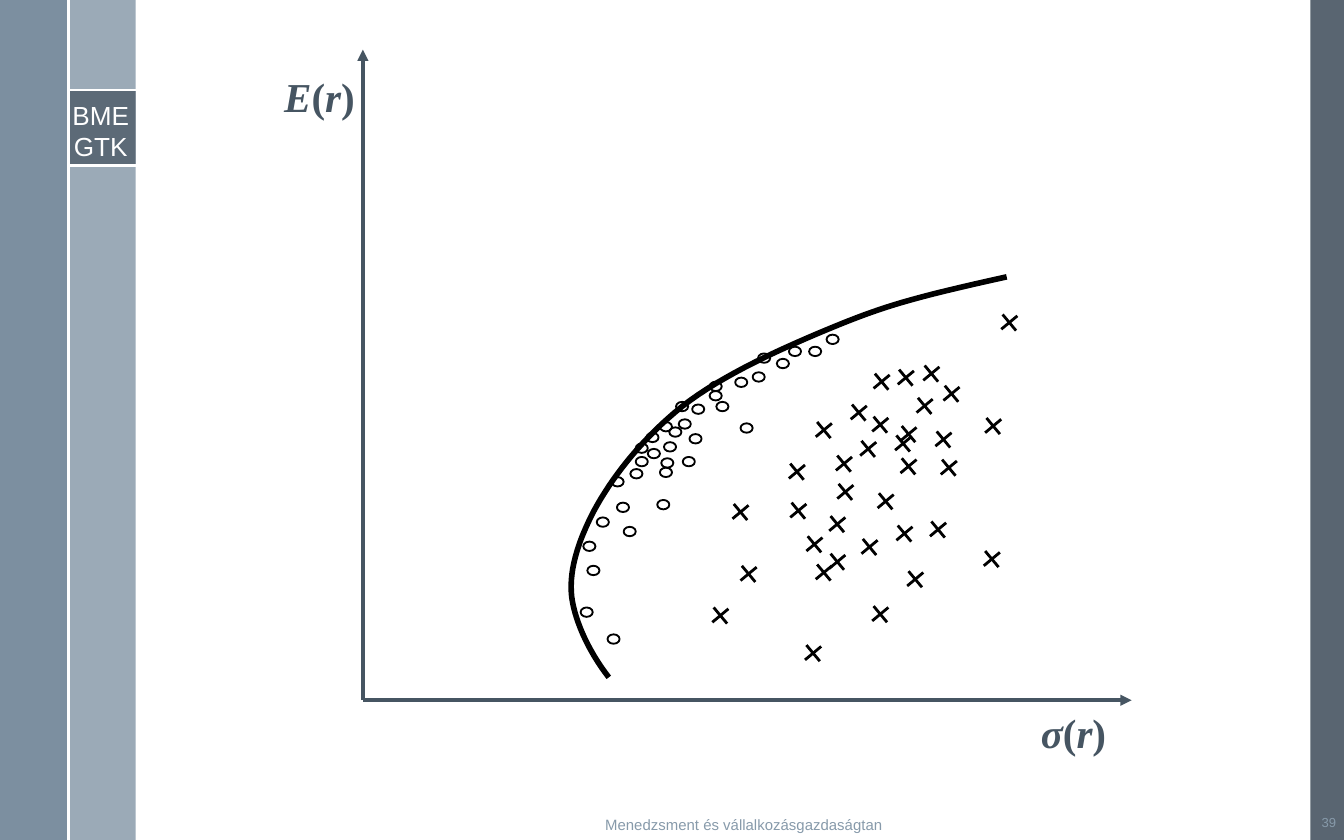
from lxml import etree
from pptx import Presentation
from pptx.dml.color import RGBColor
from pptx.enum.shapes import MSO_CONNECTOR, MSO_SHAPE
from pptx.enum.text import MSO_ANCHOR, PP_ALIGN
from pptx.oxml.ns import qn
from pptx.util import Inches, Pt

LINE = MSO_CONNECTOR.STRAIGHT
RECT, OVAL = MSO_SHAPE.RECTANGLE, MSO_SHAPE.OVAL
CENTER, RIGHT = PP_ALIGN.CENTER, PP_ALIGN.RIGHT
TOP, MIDDLE = MSO_ANCHOR.TOP, MSO_ANCHOR.MIDDLE

COLORS = {"dark": "475562", "blue": "6A8093", "light": "9BAAB7", "axis": "465562",
          "footer": "879AAA", "white": "FFFFFF", "black": "000000"}

# Content: bands are (left, top, width, height, colour, opacity %)
BANDS = [
    (9.75, 0, 0.25, 6.25, "dark", 90),
    (0.51, 0, 0.5, 6.25, "light", 100),
    (0, 0, 0.5, 6.25, "blue", 88),
    (0.51, 0.67, 0.5, 0.56, "dark", 75),
]
RULES = [((0.51, 0.67), (1.01, 0.67)), ((0.51, 1.23), (1.01, 1.23)),
         ((0.51, 0), (0.51, 6.25))]
ORIGIN = (2.7, 5.21)
AXIS_ENDS = [(8.42, 5.21), (2.7, 0.37)]
AXIS_LABELS = [("σ", (7.34, 5.22, 0.93, 0.45)), ("E", (1.91, 0.49, 0.77, 0.45))]
FOOTER = "Menedzsment és vállalkozásgazdaságtan"
PAGE = "39"

# Efficient frontier: start point, then Bezier segments
FRONTIER_START = (7.49, 2.06)
FRONTIER = [
    ((6.77, 2.22), (6.57, 2.28), (6.16, 2.45)),
    ((5.75, 2.62), (5.3, 2.83), (5.02, 3.07)),
    ((4.75, 3.3), (4.55, 3.56), (4.42, 3.8)),
    ((4.3, 4.03), (4.22, 4.27), (4.26, 4.48)),
    ((4.3, 4.69), (4.42, 4.9), (4.53, 5.04)),
]
STEPS = 16

# Centres of the crosses (single assets)
CROSSES = [
    (7.08, 2.93), (5.93, 3.51), (7.06, 3.48), (6.59, 3.73), (6.46, 3.34), (6.98, 3.94),
    (6.05, 4.86), (5.36, 4.58), (6.47, 4.07), (5.57, 4.27), (6.06, 4.05), (6.55, 4.57),
    (5.51, 3.81), (7.51, 2.4), (6.29, 3.66), (6.39, 3.07), (6.73, 3.97), (7.38, 4.16),
    (6.76, 3.23), (6.74, 2.81), (7.39, 3.17), (6.81, 4.31), (6.13, 4.26), (5.94, 3.8),
    (6.28, 3.45), (6.76, 3.47), (6.56, 2.84), (7.02, 3.27), (6.23, 4.18), (6.23, 3.9),
    (6.13, 3.2), (6.55, 3.16), (6.72, 3.3), (6.88, 3.02), (6.93, 2.78),
]
# Top left corners of the circles (portfolios)
CIRCLES = [
    (5.6, 2.77), (5.33, 2.99), (4.44, 3.85), (5.05, 3.12), (4.82, 3.34), (4.32, 4.52),
    (5.13, 3.23), (5.28, 2.84), (4.64, 3.92), (4.34, 4.03), (5.03, 2.99), (4.89, 3.72),
    (5.15, 3.01), (4.91, 3.48), (5.51, 3.15), (5.87, 2.58), (5.64, 2.63), (4.94, 3.29),
    (4.52, 4.72), (4.59, 3.74), (4.69, 3.49), (4.91, 3.14), (4.92, 3.41), (4.55, 3.55),
    (5.08, 3.4), (4.81, 3.22), (4.73, 3.3), (5.28, 2.91), (4.98, 3.18), (6.02, 2.58),
    (5.78, 2.67), (5.47, 2.81), (6.15, 2.49), (4.73, 3.4), (4.37, 4.21),
]
CIRCLE_SIZE = (0.09, 0.07)

prs = Presentation()
prs.slide_width, prs.slide_height = Inches(10), Inches(6.25)
s = prs.slides.add_slide(prs.slide_layouts[6])


def rgb(name):
    return RGBColor.from_string(COLORS[name])


def inches(values):
    return [Inches(v) for v in values]


def add_line(start, end, color, width, arrow=False):
    c = s.shapes.add_connector(LINE, *inches(start + end))
    c.line.color.rgb = rgb(color)
    c.line.width = Pt(width)
    if arrow:
        etree.SubElement(c.line._get_or_add_ln(), qn("a:tailEnd"), type="triangle")
    etree.SubElement(c._element.spPr, qn("a:effectLst"))


def outline(sp, width):
    sp.shadow.inherit = False
    sp.fill.background()
    sp.line.color.rgb = rgb("black")
    sp.line.width = Pt(width)


def add_text(box, paragraphs, font, size, color, align, insets, anchor=TOP):
    """Each paragraph is a list of runs; returns the text frame."""
    tf = s.shapes.add_textbox(*inches(box)).text_frame
    tf.word_wrap = True
    tf.vertical_anchor = anchor
    tf.margin_left = tf.margin_right = Inches(insets[0])
    tf.margin_top = tf.margin_bottom = Inches(insets[1])
    for i, runs in enumerate(paragraphs):
        p = tf.add_paragraph() if i else tf.paragraphs[0]
        p.alignment = align
        for text in runs:
            r = p.add_run()
            r.text = text
            r.font.name, r.font.size = font, Pt(size)
            r.font.color.rgb = rgb(color)
    return tf


def bezier(p0, p1, p2, p3, t):
    u = 1 - t
    return tuple(u**3 * a + 3 * u * u * t * b + 3 * u * t * t * c + t**3 * d
                 for a, b, c, d in zip(p0, p1, p2, p3))


# Side bands and rules
for *box, color, opacity in BANDS:
    sp = s.shapes.add_shape(RECT, *inches(box))
    sp.shadow.inherit = False
    sp.fill.solid()
    sp.fill.fore_color.rgb = rgb(color)
    sp.line.fill.background()
    if opacity < 100:
        clr = sp._element.spPr.find(qn("a:solidFill")).find(qn("a:srgbClr"))
        etree.SubElement(clr, qn("a:alpha"), val=str(opacity * 1000))
for start, end in RULES:
    add_line(start, end, "white", 1.5)
add_text((0.5, 0.74, 0.5, 0.47), [["BME"], ["GTK"]], "Arial", 14, "white", CENTER, (0, 0))

# Axes with labels
for end in AXIS_ENDS:
    add_line(ORIGIN, end, "axis", 2, arrow=True)
for symbol, box in AXIS_LABELS:
    tf = add_text(box, [[symbol, "(", "r", ")"]], "Times New Roman", 22, "axis",
                  RIGHT, (0.04, 0.04))
    for r in tf.paragraphs[0].runs:
        r.font.bold = True
        r.font.italic = r.text not in "()"

# Efficient frontier
points, start = [], FRONTIER_START
for segment in FRONTIER:
    points += [inches(bezier(start, *segment, k / STEPS)) for k in range(1, STEPS + 1)]
    start = segment[-1]
builder = s.shapes.build_freeform(*inches(FRONTIER_START))
builder.add_line_segments(points, close=False)
outline(builder.convert_to_shape(), 3)

# Assets and portfolios
for x, y in CROSSES:
    add_line((x - 0.05, y - 0.06), (x + 0.05, y + 0.06), "black", 1.5)
    add_line((x + 0.06, y - 0.05), (x - 0.06, y + 0.05), "black", 1.5)
for corner in CIRCLES:
    outline(s.shapes.add_shape(OVAL, *inches(corner + CIRCLE_SIZE)), 1)

# Footer and page number
add_text((2.39, 6.06, 6.29, 0.15), [[FOOTER]], "Arial", 8, "footer", CENTER,
         (0.08, 0.04), MIDDLE)
add_text((9.73, 6.02, 0.29, 0.2), [[PAGE]], "Arial", 7, "footer", RIGHT,
         (0.08, 0.04), MIDDLE)

prs.save("out.pptx")
